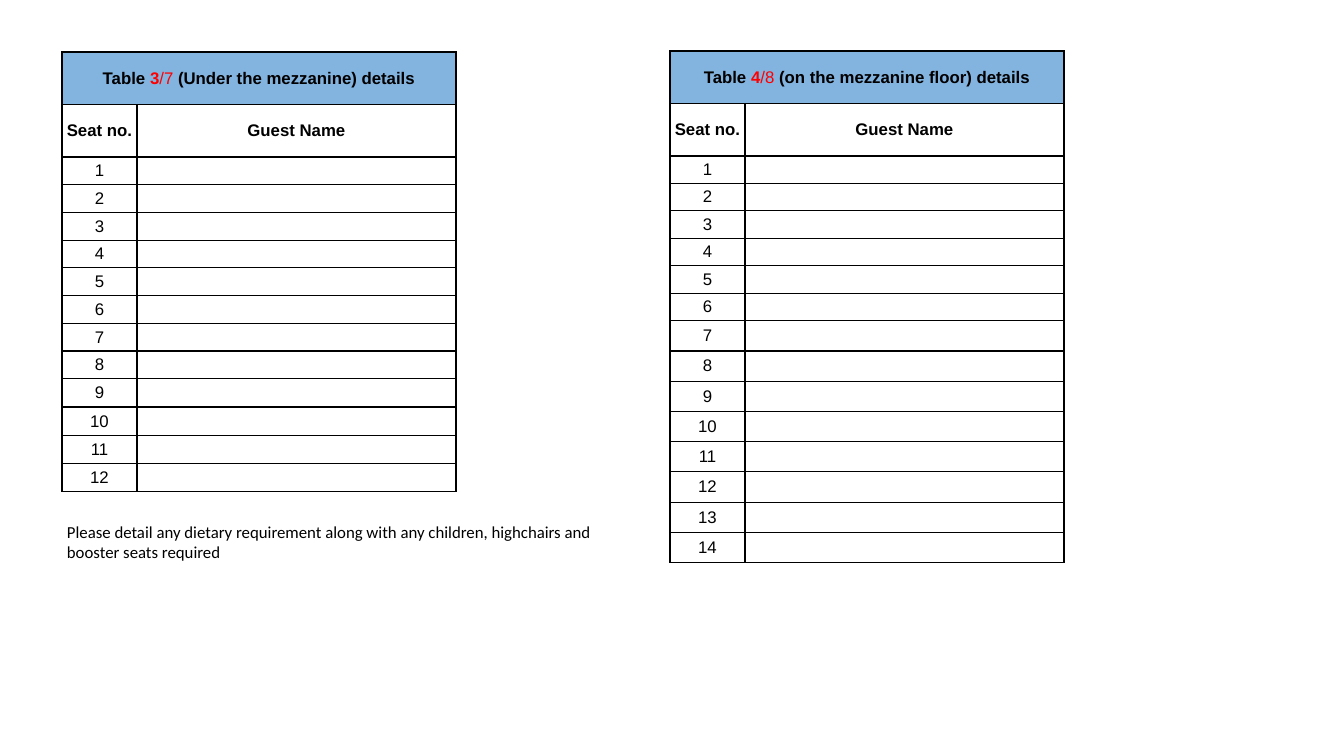
from dataclasses import dataclass

from lxml import etree
from pptx import Presentation
from pptx import util as u
from pptx.dml.color import RGBColor
from pptx.enum import shapes, text
from pptx.oxml.ns import qn

PX = 914400 / 100.8


@dataclass(frozen=True)
class Theme:
    ink: str = "000000"
    accent: str = "FF0000"
    banner: str = "83B3DF"
    paper: str = "FFFFFF"
    table_font: str = "Arial"
    note_font: str = "Calibri"
    size: int = 12
    border: int = 1


THEME = Theme()


def px(n):
    return u.Emu(round(n * PX))


def style_run(r, font, color=THEME.ink, bold=False):
    r.font.name = font
    r.font.size = u.Pt(THEME.size)
    r.font.bold = bold
    r.font.color.rgb = RGBColor.from_string(color)


def set_borders(cell):
    tc_pr = cell._tc.get_or_add_tcPr()
    for i, side in enumerate(("lnL", "lnR", "lnT", "lnB")):
        ln = etree.Element(qn(f"a:{side}"), w=str(u.Pt(THEME.border)))
        fill = etree.SubElement(ln, qn("a:solidFill"))
        etree.SubElement(fill, qn("a:srgbClr"), val=THEME.ink)
        tc_pr.insert(i, ln)


def fill_cell(cell, parts=(), fill=None):
    """Writes (text, colour, bold) parts, centred in a bordered cell."""
    cell.margin_left = cell.margin_right = 0
    cell.margin_top = cell.margin_bottom = 0
    cell.vertical_anchor = text.MSO_ANCHOR.MIDDLE
    if fill:
        cell.fill.solid()
        cell.fill.fore_color.rgb = RGBColor.from_string(fill)
    else:
        cell.fill.background()
    set_borders(cell)
    p = cell.text_frame.paragraphs[0]
    p.alignment = text.PP_ALIGN.CENTER
    for words, color, bold in parts:
        r = p.add_run()
        r.text = words
        style_run(r, THEME.table_font, color, bold)
    if not parts:
        # keeps an empty row from growing to the default type size
        etree.SubElement(p._p, qn("a:endParaRPr"), sz=str(THEME.size * 100))


def add_seating_table(s, x, y, title, bands):
    """Bands are (row count, total height) pairs from top to bottom."""
    heights = [h / n for n, h in bands for _ in range(n)]
    widths = (75, 319)
    frame = s.shapes.add_table(len(heights), len(widths), px(x), px(y),
                               px(sum(widths)), px(sum(heights)))
    tbl = frame.table
    tbl.first_row = tbl.horz_banding = False
    for col, w in zip(tbl.columns, widths):
        col.width = px(w)
    for row, h in zip(tbl.rows, heights):
        row.height = px(h)

    tbl.cell(0, 0).merge(tbl.cell(0, 1))
    number, alternative, place = title
    fill_cell(tbl.cell(0, 0), [
        ("Table ", THEME.ink, True),
        (number, THEME.accent, True),
        (f"/{alternative} ", THEME.accent, False),
        (f"({place}) details", THEME.ink, True),
    ], THEME.banner)
    fill_cell(tbl.cell(0, 1), fill=THEME.banner)
    for c, heading in enumerate(("Seat no.", "Guest Name")):
        fill_cell(tbl.cell(1, c), [(heading, THEME.ink, True)])
    for seat in range(1, len(heights) - 1):
        fill_cell(tbl.cell(seat + 1, 0), [(str(seat), THEME.ink, False)])
        fill_cell(tbl.cell(seat + 1, 1))


def add_note(s, x, y, w, h, words):
    sp = s.shapes.add_shape(shapes.MSO_SHAPE.RECTANGLE, px(x), px(y), px(w), px(h))
    sp.shadow.inherit = False
    sp.fill.solid()
    sp.fill.fore_color.rgb = RGBColor.from_string(THEME.paper)
    sp.line.fill.background()
    tf = sp.text_frame
    tf.word_wrap = True
    tf.vertical_anchor = text.MSO_ANCHOR.TOP
    tf.margin_left = tf.margin_right = px(5)
    tf.margin_top = tf.margin_bottom = px(5)
    tf.text = words
    p = tf.paragraphs[0]
    p.alignment = text.PP_ALIGN.LEFT
    style_run(p.runs[0], THEME.note_font)


def main():
    prs = Presentation()
    prs.slide_width, prs.slide_height = px(1344), px(756)
    s = prs.slides.add_slide(prs.slide_layouts[6])
    add_seating_table(s, 62, 52, ("3", "7", "Under the mezzanine"),
                      [(2, 105), (8, 222), (4, 113)])
    add_note(s, 62, 517, 549, 50,
             "Please detail any dietary requirement along with any children, "
             "highchairs and booster seats required")
    add_seating_table(s, 670, 51, ("4", "8", "on the mezzanine floor"),
                      [(2, 105), (6, 165), (8, 242)])
    prs.save("out.pptx")


if __name__ == "__main__":
    main()
